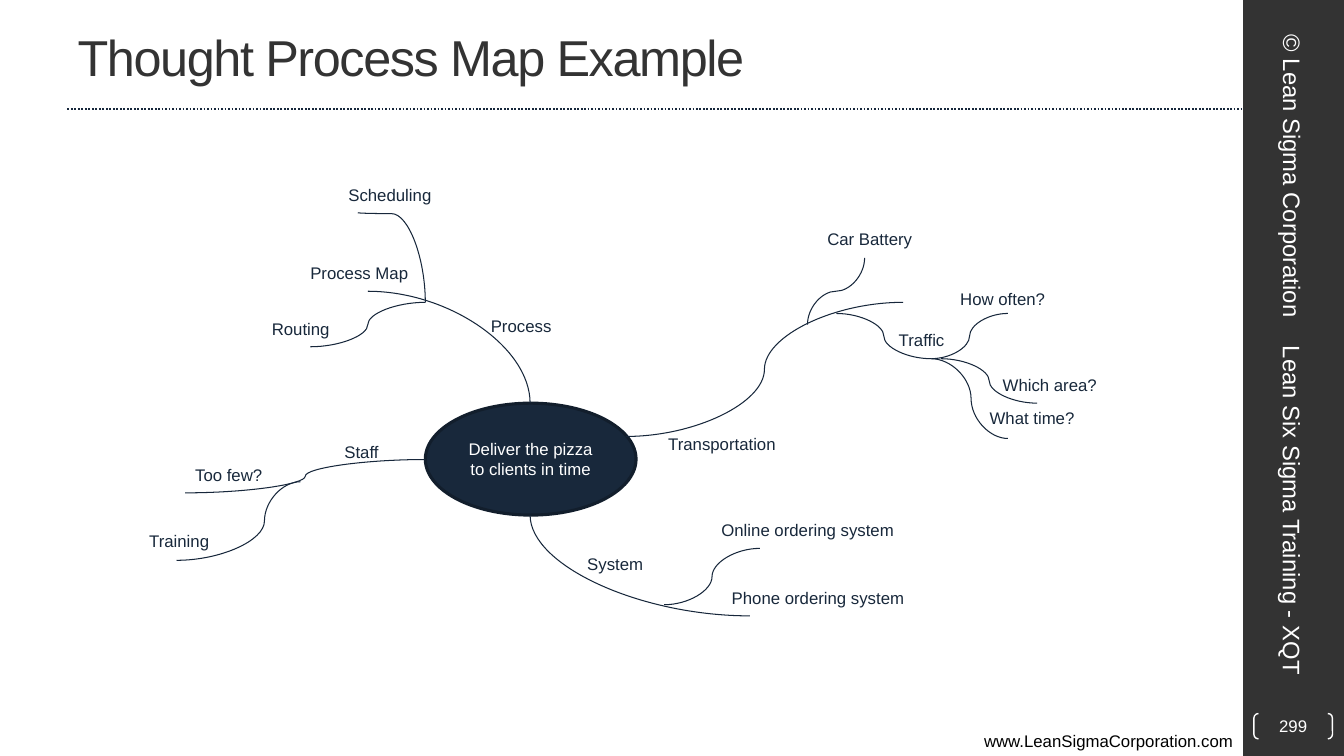
from pptx import Presentation
from pptx.dml.color import RGBColor
from pptx.enum.dml import MSO_LINE
from pptx.enum.shapes import MSO_CONNECTOR, MSO_SHAPE
from pptx.enum.text import MSO_ANCHOR, MSO_AUTO_SIZE, PP_ALIGN
from pptx.oxml.ns import qn
from pptx.util import Cm, Pt
from lxml import etree

STRAIGHT, CURVE = MSO_CONNECTOR.STRAIGHT, MSO_CONNECTOR.CURVE
LEFT, CENTER, RIGHT = PP_ALIGN.LEFT, PP_ALIGN.CENTER, PP_ALIGN.RIGHT
MIDDLE, TOP = MSO_ANCHOR.MIDDLE, MSO_ANCHOR.TOP
COLORS = {name: RGBColor.from_string(value) for name, value in {
    "banner": "333333", "white": "FFFFFF", "black": "000000",
    "branch": "17273B", "navy": "18283B", "rim": "121E2C"}.items()}

deck = Presentation()
deck.slide_width, deck.slide_height = Cm(33.87), Cm(19.05)
page = deck.slides.add_slide(deck.slide_layouts[5])
shapes = page.shapes


def write(shape, text, size, color, align=LEFT, anchor=MIDDLE):
    frame = shape.text_frame
    frame.word_wrap = True
    frame.vertical_anchor = anchor
    para = frame.paragraphs[0]
    para.alignment = align
    span = para.add_run()
    span.text = text
    para.font.name = "Arial"
    para.font.size = Pt(size)
    para.font.color.rgb = COLORS[color]
    return frame


def draw_line(kind, start, end, width):
    line = shapes.add_connector(kind, *(Cm(value) for value in (*start, *end)))
    line.line.color.rgb = COLORS["branch"]
    line.line.width = Pt(width)
    etree.SubElement(line._element.spPr, qn("a:effectLst"))
    return line


# Side banner and dotted rule
banner = shapes.add_shape(MSO_SHAPE.RECTANGLE, Cm(31.33), 0, Cm(2.54), Cm(19.05))
banner.shadow.inherit = False
banner.fill.solid()
banner.fill.fore_color.rgb = COLORS["banner"]
banner.line.fill.background()
rule = draw_line(STRAIGHT, (1.7, 2.74), (31.33, 2.74), 1.25)
rule.line.dash_style = MSO_LINE.ROUND_DOT

# Title
title = shapes.title
title.left, title.top, title.width, title.height = Cm(1.7), Cm(0.08), Cm(28.22), Cm(2.67)
frame = write(title, "Thought Process Map Example", 36, "banner")
frame.paragraphs[0].runs[0]._r.get_or_add_rPr().set("spc", "-100")

# Web address
address = shapes.add_textbox(0, Cm(18.29), Cm(31.33), Cm(0.76))
write(address, "www.LeanSigmaCorporation.com", 12, "black", RIGHT, TOP)

# Page number in brackets
number = shapes.add_shape(MSO_SHAPE.DOUBLE_BRACKET, Cm(31.6), Cm(17.98), Cm(1.98), Cm(0.64))
number.adjustments[0] = 0.18
number.shadow.inherit = False
number.fill.background()
number.line.color.rgb = COLORS["white"]
number.line.width = Pt(1)
frame = write(number, "299", 12, "white", CENTER)
frame.margin_left = frame.margin_right = frame.margin_top = frame.margin_bottom = 0

# Sideways banner text
for text, left, top, width, align in (
        ("© Lean Sigma Corporation", 28.55, 3.76, 8.05, CENTER),
        ("Lean Six Sigma Training - XQT", 27.91, 12.45, 9.32, LEFT)):
    box = shapes.add_textbox(Cm(left), Cm(top), Cm(width), Cm(1.35))
    box.rotation = 90
    write(box, text, 17, "white", align)

# Central topic
topic = shapes.add_shape(MSO_SHAPE.OVAL, Cm(10.72), Cm(10.16), Cm(5.31), Cm(2.82))
topic.shadow.inherit = False
topic.fill.solid()
topic.fill.fore_color.rgb = COLORS["navy"]
topic.line.color.rgb = COLORS["rim"]
topic.line.width = Pt(2.25)
write(topic, "Deliver the pizza to clients in time", 12, "white", CENTER)

# Branches: start, end, leaves vertically, bend position (None = quarter curve)
traffic_fork, process_fork = (23.47, 9.04), (10.72, 7.62)
branches = (
    ((15.77, 11), (22.76, 7.62), False, 0.5),           # Transportation
    ((10.72, 11.58), (4.67, 12.42), False, 0.5),        # Staff
    ((13.36, 12.98), (18.9, 15.52), True, None),        # System
    ((9.27, 7.34), (13.36, 10.16), False, None),        # Process
    ((20.35, 8.18), (21.79, 6.5), True, 0.5),           # Car Battery
    ((21.08, 7.9), traffic_fork, False, 0.5),           # Traffic
    (traffic_fork, (25.4, 11.05), False, 0.52),         # What time?
    (traffic_fork, (25.4, 7.9), False, 0.5),            # How often?
    ((23.72, 9.04), (26.14, 10.16), False, 0.5),        # Which area?
    ((7.57, 12.14), (4.45, 14.12), False, 0.29),        # Training
    (process_fork, (9.02, 5.36), True, 0.99),           # Scheduling
    ((7.82, 8.74), process_fork, False, 0.5),           # Routing
    ((16.74, 15.24), (19.15, 13.82), False, 0.5),       # Online ordering
)
for start, end, vertical, bend in branches:
    if vertical:  # lay the curve flat about its centre, then turn it by 90°
        (x1, y1), (x2, y2) = start, end
        middle_x, middle_y = (x1 + x2) / 2, (y1 + y2) / 2
        run, rise = (y2 - y1) / 2, (x1 - x2) / 2
        start = middle_x - run, middle_y - rise
        end = middle_x + run, middle_y + rise
    branch = draw_line(CURVE, start, end, 0.75)
    branch.rotation = 90 if vertical else 0
    geometry = branch._element.spPr.find(qn("a:prstGeom"))
    if bend is None:
        geometry.set("prst", "curvedConnector2")
    else:
        guides = geometry.find(qn("a:avLst"))
        etree.SubElement(guides, qn("a:gd"), name="adj1", fmla=f"val {round(bend * 100000)}")

# Branch labels: text, left, top, width
labels = (
    ("Transportation", 16.59, 10.8, 3.45),
    ("Staff", 8.43, 11, 1.47),
    ("System", 14.55, 13.82, 2.06),
    ("Process", 12.12, 7.82, 2.18),
    ("Car Battery", 20.6, 5.64, 2.84),
    ("Traffic", 22.4, 8.18, 1.78),
    ("How often?", 23.95, 7.16, 2.84),
    ("Which area?", 25.02, 9.32, 3.1),
    ("What time?", 24.69, 10.16, 2.84),
    ("Training", 3.51, 13.26, 2.16),
    ("Too few?", 4.67, 11.58, 2.36),
    ("Scheduling", 8.53, 4.52, 2.79),
    ("Routing", 6.6, 7.9, 2.11),
    ("Process Map", 7.57, 6.5, 3.2),
    ("Online ordering system", 17.93, 12.98, 5.21),
    ("Phone ordering system", 18.19, 14.68, 5.21),
)
for text, left, top, width in labels:
    box = shapes.add_textbox(Cm(left), Cm(top), Cm(width), Cm(0.85))
    frame = write(box, text, 12, "navy", LEFT, TOP)
    frame.word_wrap = False
    frame.auto_size = MSO_AUTO_SIZE.SHAPE_TO_FIT_TEXT

deck.save("out.pptx")
